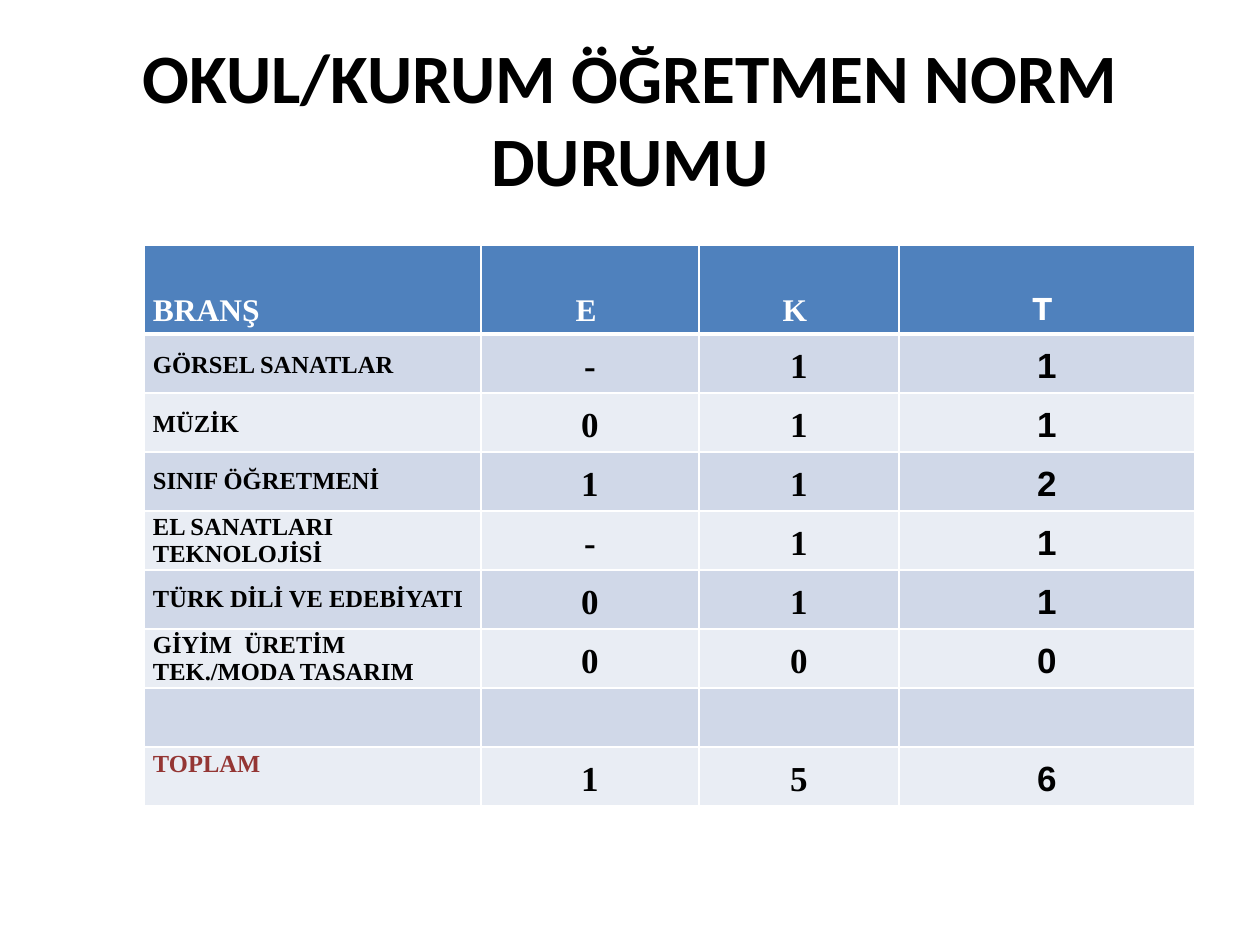
from lxml.etree import SubElement
from pptx import Presentation
from pptx.dml.color import RGBColor
from pptx.enum.text import MSO_ANCHOR, PP_ALIGN
from pptx.oxml.ns import qn
from pptx.util import Emu, Pt

COLORS = {"header": "4F81BD", "odd": "D0D8E8", "even": "E9EDF4",
          "white": "FFFFFF", "black": "000000", "total": "943634"}
SERIF = "Times New Roman"


def px(n):
    return Emu(round(n * 914400 / 126))


def add_borders(cell, widths):
    """Draw white cell borders; widths maps side letter to points."""
    tcPr = cell._tc.get_or_add_tcPr()
    for side, width in widths.items():
        ln = SubElement(tcPr, qn(f"a:ln{side}"), w=str(Pt(width)))
        fill = SubElement(ln, qn("a:solidFill"))
        SubElement(fill, qn("a:srgbClr"), val=COLORS["white"])


prs = Presentation()
prs.slide_width, prs.slide_height = px(1260), px(945)
s = prs.slides.add_slide(prs.slide_layouts[5])

title = s.shapes.title
title.left, title.top, title.width, title.height = px(63), px(38), px(1134), px(158)
tf = title.text_frame
tf.word_wrap = True
tf.vertical_anchor = MSO_ANCHOR.MIDDLE
p = tf.paragraphs[0]
p.text = "OKUL/KURUM ÖĞRETMEN NORM DURUMU"
p.alignment = PP_ALIGN.CENTER
p.font.name, p.font.size, p.font.bold = "Calibri", Pt(39.6), True
p.font.color.rgb = RGBColor.from_string(COLORS["black"])

rows = [
    ("BRANŞ", "E ", "K ", "T "),
    ("GÖRSEL SANATLAR", "-", "1", "1"),
    ("MÜZİK", "0", "1", "1"),
    ("SINIF ÖĞRETMENİ", "1", "1", "2"),
    ("EL SANATLARI TEKNOLOJİSİ", "-", "1", "1"),
    ("TÜRK DİLİ VE EDEBİYATI", "0", "1", "1"),
    ("GİYİM  ÜRETİM TEK./MODA TASARIM", "0", "0", "0"),
    ("", "", "", ""),
    ("TOPLAM", "1", "5", "6"),
]
col_widths = [337, 218, 200, 296]
row_heights = [89] + [59] * 8
last = len(rows) - 1
table = s.shapes.add_table(len(rows), len(col_widths), px(144), px(245),
                           px(sum(col_widths)), px(sum(row_heights))).table
for column, width in zip(table.columns, col_widths):
    column.width = px(width)
for row, height in zip(table.rows, row_heights):
    row.height = px(height)

for i, values in enumerate(rows):
    header = i == 0
    fill = "header" if header else "odd" if i % 2 else "even"
    for j, value in enumerate(values):
        cell = table.cell(i, j)
        add_borders(cell, {"L": 1, "R": 1, "T": 3 if i == 1 else 1, "B": 3 if header else 1})
        cell.fill.solid()
        cell.fill.fore_color.rgb = RGBColor.from_string(COLORS[fill])
        if not value:
            continue
        cell.margin_left = cell.margin_right = px(9)
        cell.margin_top, cell.margin_bottom = 0, px(6 if header else 0)
        if header:
            cell.vertical_anchor = MSO_ANCHOR.BOTTOM
        elif i == last and j == 0:
            cell.vertical_anchor = MSO_ANCHOR.TOP
        else:
            cell.vertical_anchor = MSO_ANCHOR.MIDDLE
        p = cell.text_frame.paragraphs[0]
        p.text = value
        p.alignment = PP_ALIGN.CENTER if j else PP_ALIGN.LEFT
        p.line_spacing = Pt(15.4) if j == 0 and 3 <= i < last else 1.15
        p.font.bold = True
        p.font.size = Pt(18 if header else 20 if j else 14)
        p.font.name = SERIF if j < 3 else "Montserrat" if header else "Arial"
        color = "white" if header else "total" if i == last and j == 0 else "black"
        p.font.color.rgb = RGBColor.from_string(COLORS[color])

prs.save("out.pptx")
